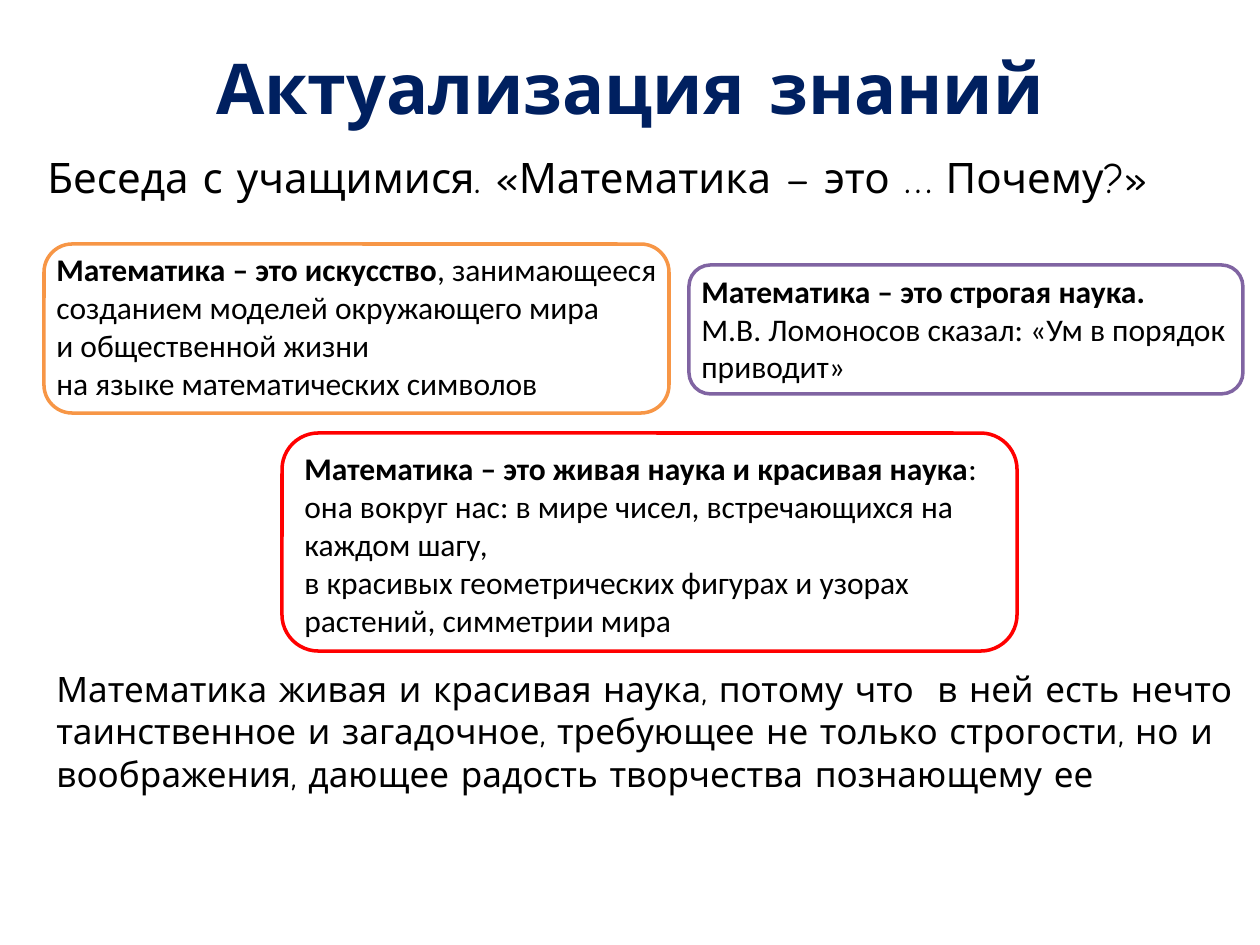
"""Build the slide about what mathematics is, with three outlined statements."""
import pptx
import pptx.dml.color
import pptx.enum.shapes
import pptx.enum.text
import pptx.util

SCALE = 914400 / 126


def color(value):
    return pptx.dml.color.RGBColor.from_string(value)


def write(shape, paragraphs, size=18, font="Calibri", fill="000000",
          align="LEFT", anchor="MIDDLE"):
    frame = shape.text_frame
    frame.word_wrap = True
    frame.auto_size = pptx.enum.text.MSO_AUTO_SIZE.NONE
    frame.vertical_anchor = pptx.enum.text.MSO_ANCHOR[anchor]
    for index, (bold_text, plain_text) in enumerate(paragraphs):
        paragraph = frame.add_paragraph() if index else frame.paragraphs[0]
        paragraph.alignment = pptx.enum.text.PP_ALIGN[align]
        for text, bold in ((bold_text, True), (plain_text, False)):
            if text:
                run = paragraph.add_run()
                run.text = text
                run.font.size = pptx.util.Pt(size)
                run.font.name = font
                run.font.bold = bold
                run.font.color.rgb = color(fill)


presentation = pptx.Presentation()
presentation.slide_width = pptx.util.Inches(10)
presentation.slide_height = pptx.util.Inches(7.5)
slide = presentation.slides.add_slide(presentation.slide_layouts[5])

title = slide.shapes.title
title.left, title.top, title.width, title.height = (
    round(value * SCALE) for value in (63, 38, 1134, 97))
write(title, [("Актуализация знаний", "")], size=40, font="Comic Neue",
      fill="002060", align="CENTER")

statements = [
    ((44, 244, 625, 169), (44, 244, 630, 165), "F79646", "TOP", [
        ("Математика – это искусство", ", занимающееся"),
        ("", "созданием моделей окружающего мира"),
        ("", "и общественной жизни"),
        ("", "на языке математических символов")]),
    ((689, 265, 554, 129), (689, 265, 595, 127), "8064A2", "MIDDLE", [
        ("Математика – это строгая наука.", ""),
        ("", "М.В. Ломоносов сказал: «Ум в порядок приводит»")]),
    ((282, 433, 735, 218), (292, 442, 725, 204), "FF0000", "MIDDLE", [
        ("Математика – это живая наука и красивая наука", ":"),
        ("", "она вокруг нас: в мире чисел, встречающихся на каждом шагу,"),
        ("", "в красивых геометрических фигурах и узорах растений, симметрии мира")]),
]
for outline_place, text_place, line_color, anchor, paragraphs in statements:
    outline = slide.shapes.add_shape(
        pptx.enum.shapes.MSO_SHAPE.ROUNDED_RECTANGLE,
        *(round(value * SCALE) for value in outline_place))
    outline.shadow.inherit = False
    outline.fill.solid()
    outline.fill.fore_color.rgb = color("FFFFFF")
    outline.line.color.rgb = color(line_color)
    outline.line.width = pptx.util.Pt(2)
    statement = slide.shapes.add_textbox(
        *(round(value * SCALE) for value in text_place))
    write(statement, paragraphs, anchor=anchor)

remarks = [
    ((35, 145, 1134, 70), 24, "TOP",
     "Беседа с учащимися. «Математика – это … Почему?»"),
    ((44, 661, 1216, 140), 20, "MIDDLE",
     "Математика живая и красивая наука, потому что  в ней есть нечто "
     "таинственное и загадочное, требующее не только строгости, но и "
     "воображения, дающее радость творчества познающему ее"),
]
for place, size, anchor, text in remarks:
    remark = slide.shapes.add_textbox(*(round(value * SCALE) for value in place))
    write(remark, [("", text)], size=size, font="Comic Neue", anchor=anchor)

presentation.save("out.pptx")
